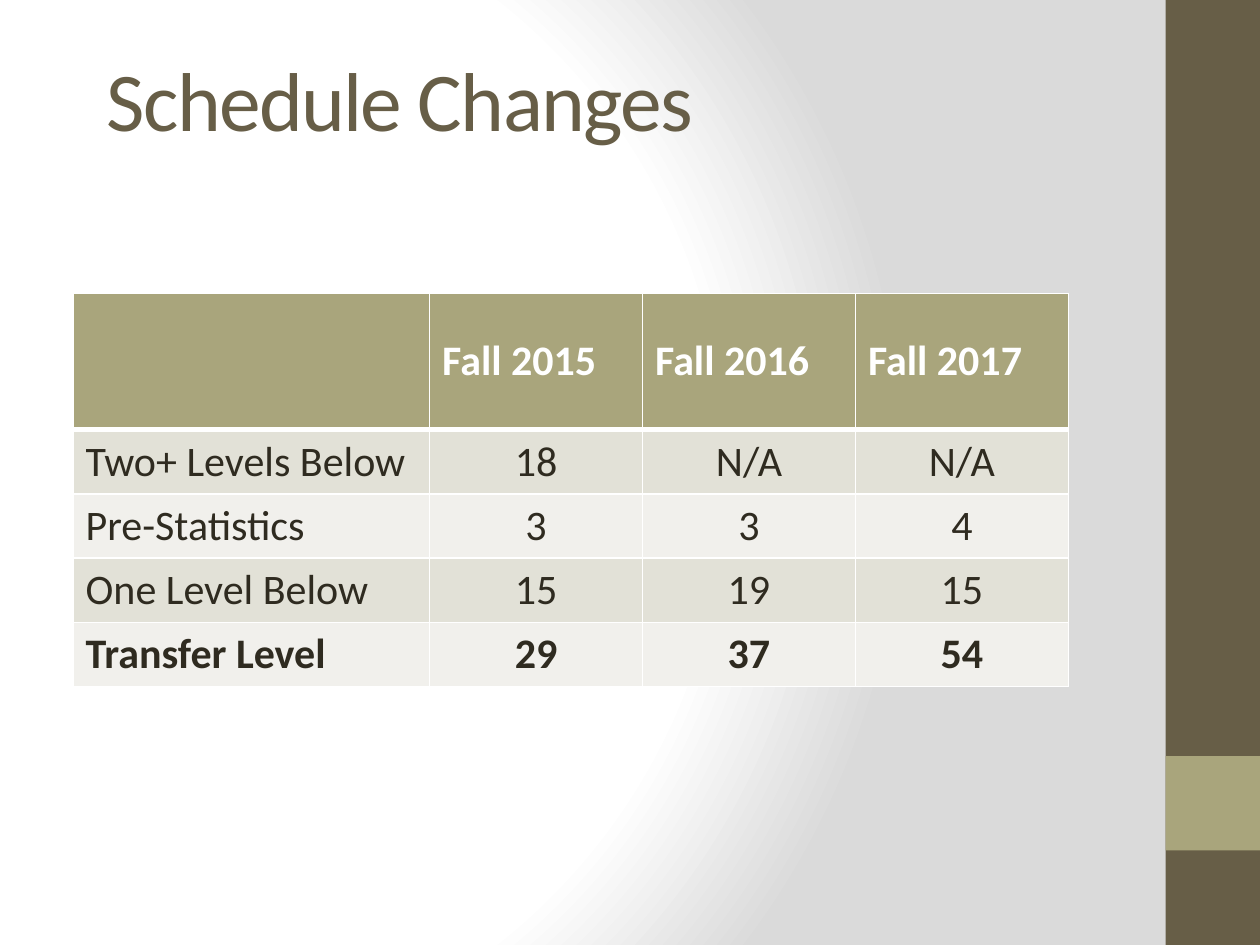
"""Build the Schedule Changes slide with its table of sections by level."""
import pptx
import pptx.dml.color
import pptx.enum.shapes
import pptx.enum.text
import pptx.oxml
import pptx.oxml.ns
import pptx.util

Inches = pptx.util.Inches
Pt = pptx.util.Pt
RGBColor = pptx.dml.color.RGBColor
PP_ALIGN = pptx.enum.text.PP_ALIGN
MSO_ANCHOR = pptx.enum.text.MSO_ANCHOR
qn = pptx.oxml.ns.qn

BROWN = RGBColor(0x67, 0x5E, 0x47)
OLIVE = RGBColor(0xA9, 0xA5, 0x7C)
INK = RGBColor(0x2F, 0x2B, 0x20)
WHITE = RGBColor(0xFF, 0xFF, 0xFF)
GREY = RGBColor(0xDA, 0xDA, 0xDA)
BANDS = (RGBColor(0xE2, 0xE1, 0xD7), RGBColor(0xF1, 0xF0, 0xEC))

ROWS = [
    ["", "Fall 2015", "Fall 2016", "Fall 2017"],
    ["Two+ Levels Below", "18", "N/A", "N/A"],
    ["Pre-Statistics", "3", "3", "4"],
    ["One Level Below", "15", "19", "15"],
    ["Transfer Level", "29", "37", "54"],
]
COL_WIDTHS = [2.83, 1.69, 1.69, 1.69]
ROW_HEIGHTS = [1.08, 0.51, 0.51, 0.51, 0.51]


class SlideBuilder:
    def __init__(self, slide, font):
        self.s = slide
        self.font = font

    def background(self, stops, center):
        fill = self.s.background.fill
        fill.gradient()
        gs = "".join(
            f'<a:gs pos="{pos * 1000}"><a:srgbClr val="{color}"/></a:gs>'
            for pos, color in stops
        )
        rect = " ".join(f'{k}="{v * 1000}"' for k, v in zip("ltrb", center))
        grad = self.s.element.find(".//" + qn("a:gradFill"))
        grad.getparent().replace(grad, pptx.oxml.parse_xml(
            f'<a:gradFill {pptx.oxml.ns.nsdecls("a")} rotWithShape="1">'
            f'<a:gsLst>{gs}</a:gsLst><a:path path="circle">'
            f'<a:fillToRect {rect}/></a:path></a:gradFill>'
        ))

    def rect(self, x, y, w, h, color):
        sp = self.s.shapes.add_shape(
            pptx.enum.shapes.MSO_SHAPE.RECTANGLE,
            Inches(x), Inches(y), Inches(w), Inches(h))
        sp.shadow.inherit = False
        sp.fill.solid()
        sp.fill.fore_color.rgb = color
        sp.line.fill.background()

    def text(self, tf, text, color, align=PP_ALIGN.LEFT, **fmt):
        p = tf.paragraphs[0]
        p.alignment = align
        r = p.add_run()
        r.text = text
        for name, value in {"name": self.font, **fmt}.items():
            setattr(r.font, name, value)
        r.font.color.rgb = color
        return r

    def title(self, x, y, w, h, text):
        sp = self.s.shapes.add_textbox(
            Inches(x), Inches(y), Inches(w), Inches(h))
        tf = sp.text_frame
        tf.word_wrap = True
        r = self.text(tf, text, BROWN, size=Pt(47.7))
        r._r.get_or_add_rPr().set("spc", "-100")

    def border(self, cell, widths):
        tc_pr = cell._tc.get_or_add_tcPr()
        for i, (side, width) in enumerate(zip("LRTB", widths)):
            tc_pr.insert(i, pptx.oxml.parse_xml(
                f'<a:ln{side} {pptx.oxml.ns.nsdecls("a")} w="{Pt(width)}">'
                f'<a:solidFill><a:srgbClr val="{WHITE}"/></a:solidFill></a:ln{side}>'
            ))

    def table(self, x, y, rows, col_widths, row_heights):
        table = self.s.shapes.add_table(
            len(rows), len(col_widths), Inches(x), Inches(y),
            Inches(sum(col_widths)), Inches(sum(row_heights))).table
        for col, width in zip(table.columns, col_widths):
            col.width = Inches(width)
        for i, (row, height) in enumerate(zip(table.rows, row_heights)):
            row.height = Inches(height)
            header, last = i == 0, i == len(rows) - 1
            for j, cell in enumerate(row.cells):
                cell.vertical_anchor = MSO_ANCHOR.MIDDLE
                cell.fill.solid()
                cell.fill.fore_color.rgb = OLIVE if header else BANDS[(i - 1) % 2]
                self.border(cell, (1, 1, 3 if i == 1 else 1, 3 if header else 1))
                if rows[i][j]:
                    centred = j > 0 and not header
                    self.text(
                        cell.text_frame, rows[i][j], WHITE if header else INK,
                        PP_ALIGN.CENTER if centred else PP_ALIGN.LEFT,
                        size=Pt(24), bold=header or last)


def main():
    prs = pptx.Presentation()
    prs.slide_width, prs.slide_height = Inches(10), Inches(7.5)
    b = SlideBuilder(prs.slides.add_slide(prs.slide_layouts[6]), "Calibri")
    b.background([(0, WHITE), (75, WHITE), (100, GREY)], (20, 50, 100, 50))
    b.rect(9.25, 0, 0.75, 7.5, BROWN)
    b.rect(9.25, 6, 0.75, 0.75, OLIVE)
    b.title(0.75, 0.33, 8.42, 1.08, "Schedule Changes")
    b.table(0.58, 2.33, ROWS, COL_WIDTHS, ROW_HEIGHTS)
    prs.save("out.pptx")


if __name__ == "__main__":
    main()
